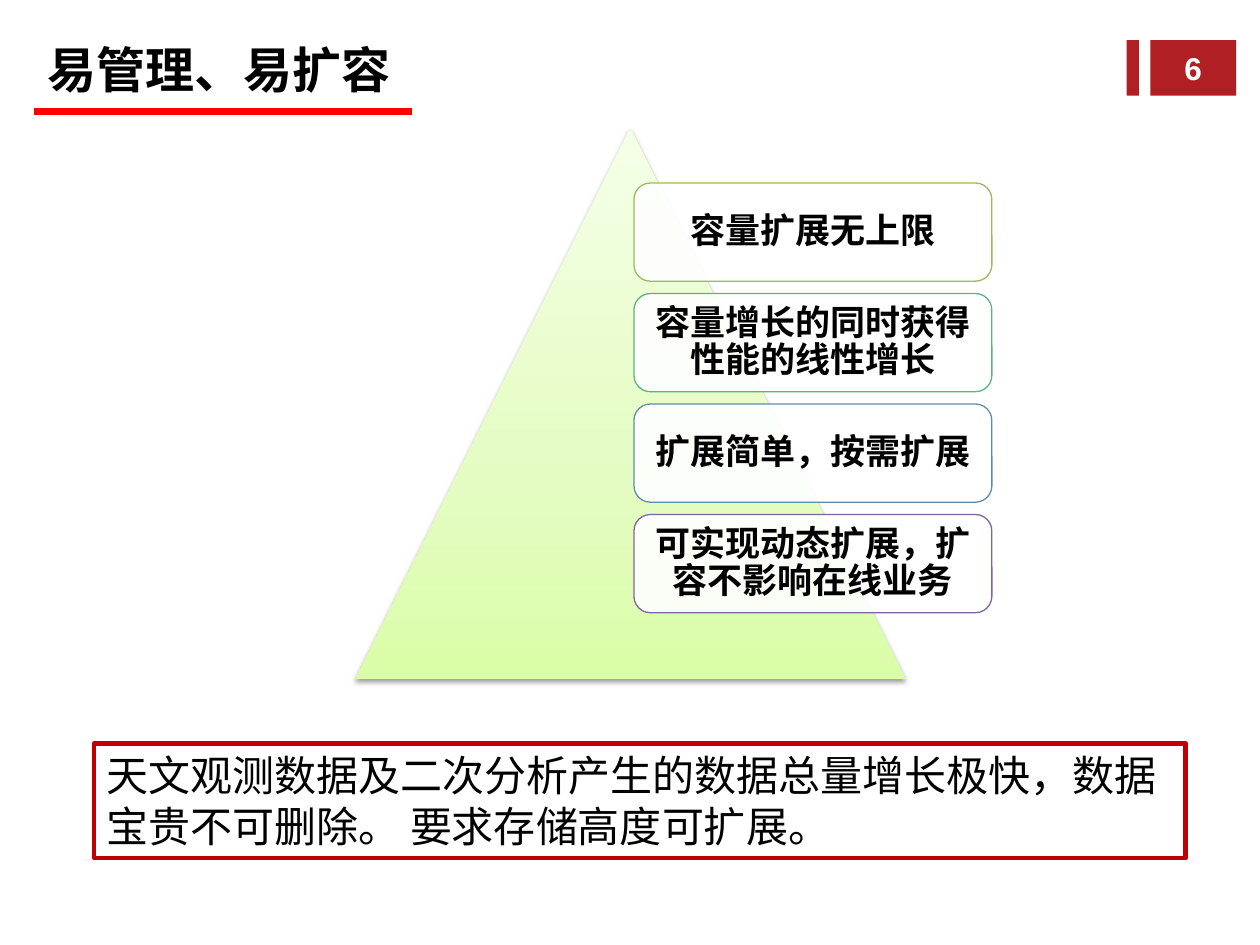
from lxml import etree
from pptx import Presentation
from pptx.dml.color import RGBColor
from pptx.enum import shapes, text
from pptx.oxml import ns
from pptx.util import Cm, Pt

HUES = {"black": "000000", "white": "FFFFFF", "badge": "B01F24", "rule": "FF0000",
        "frame": "C00000", "low": "DAFDA7", "mid": "E4FCC2", "high": "F5FFE7",
        "green": "9BBB59", "mint": "5CB37C", "blue": "608CAB", "plum": "8064A2"}
HAN = "Noto Sans CJK SC"
KIND = shapes.MSO_SHAPE
ALIGN = text.PP_ALIGN
ANCHOR = text.MSO_ANCHOR
CARDS = [("容量扩展无上限", "green"), ("容量增长的同时获得性能的线性增长", "mint"),
         ("扩展简单，按需扩展", "blue"), ("可实现动态扩展，扩容不影响在线业务", "plum")]
NOTE = "天文观测数据及二次分析产生的数据总量增长极快，数据宝贵不可删除。 要求存储高度可扩展。"


def rgb(name):
    return RGBColor.from_string(HUES[name])


def sub(node, tag, **vals):
    return etree.SubElement(node, ns.qn("a:" + tag), {k: str(v) for k, v in vals.items()})


def assign(item, vals):
    for key, val in vals.items():
        setattr(item, key, val)


def write(shape, words, font, para, frame, hue="black"):
    """Fill a shape with one formatted paragraph."""
    body = shape.text_frame
    assign(body, {"word_wrap": True, **frame})
    line = body.paragraphs[0]
    assign(line, para)
    run = line.add_run()
    run.text = words
    assign(run.font, font)
    run.font.color.rgb = rgb(hue)
    sub(run.font._element, "ea", typeface=HAN)


def block(slide, kind, box, fill=None, line=None, width=1):
    """Add a flat shape; box holds left, top, width, height in cm."""
    shape = slide.shapes.add_shape(kind, *map(Cm, box))
    shape.shadow.inherit = False
    if fill:
        shape.fill.solid()
        shape.fill.fore_color.rgb = rgb(fill)
    else:
        shape.fill.background()
    if line:
        shape.line.color.rgb = rgb(line)
        shape.line.width = Pt(width)
    else:
        shape.line.fill.background()
    return shape


def head(slide, box):
    """Title with the red rule below it."""
    x, y, w, h = box
    title = slide.shapes.title
    assign(title, dict(zip(("left", "top", "width", "height"), map(Cm, box))))
    write(title, "易管理、易扩容", {"size": Pt(28), "bold": True, "name": HAN},
          {"alignment": ALIGN.LEFT},
          {"vertical_anchor": ANCHOR.MIDDLE, "auto_size": text.MSO_AUTO_SIZE.NONE})
    base = Cm(y + h + 0.06)
    rule = slide.shapes.add_connector(shapes.MSO_CONNECTOR.STRAIGHT,
                                      Cm(x - 0.02), base, Cm(x + 7.6), base)
    rule.line.color.rgb = rgb("rule")
    rule.line.width = Pt(4)
    sub(rule._element.spPr, "effectLst")


def badge(slide, box):
    """Narrow bar and page number block."""
    x, y, w, h = box
    block(slide, KIND.RECTANGLE, (x, y, 0.25, h), "badge")
    page = block(slide, KIND.RECTANGLE, (x + 0.48, y, w - 0.48, h), "badge")
    write(page, "6", {"size": Pt(18), "bold": True, "name": "Arial"},
          {"alignment": ALIGN.CENTER}, {"vertical_anchor": ANCHOR.MIDDLE}, "white")


def peak(slide, box):
    """Triangle with a rising gradient and a soft shadow."""
    shape = block(slide, KIND.ISOSCELES_TRIANGLE, box)
    fill = shape.fill
    fill.gradient()
    fill.gradient_angle = 90
    stops = shape._element.spPr.find(".//" + ns.qn("a:gsLst"))
    for old in list(stops):
        stops.remove(old)
    for pos, name in ((0, "low"), (35, "mid"), (100, "high")):
        sub(sub(stops, "gs", pos=pos * 1000), "srgbClr", val=HUES[name])
    glow = sub(shape._element.spPr.find(ns.qn("a:effectLst")), "outerShdw",
               blurRad=Pt(3.1), dist=Pt(1.6), dir=5400000, rotWithShape=0)
    sub(sub(glow, "srgbClr", val=HUES["black"]), "alpha", val=38000)


def pyramid(slide, box):
    """Triangle with a column of cards over its right half."""
    x, y, w, h = box
    peak(slide, box)
    wide, tall = w * 0.65, 1.98
    step = tall * 9 / 8
    pads = dict.fromkeys(("margin_left", "margin_top", "margin_right", "margin_bottom"), Cm(0.2))
    for i, (words, hue) in enumerate(CARDS):
        place = (x + w / 2 + 0.07, y + 1.1 + i * step, wide, tall)
        card = block(slide, KIND.ROUNDED_RECTANGLE, place, "white", hue, 0.75)
        tint = card._element.spPr.find(ns.qn("a:solidFill"))[0]
        sub(tint, "alpha", val=90000)
        write(card, words, {"size": Pt(20), "bold": True, "name": "Calibri"},
              {"alignment": ALIGN.CENTER, "line_spacing": 0.9, "space_after": Pt(7)},
              {"vertical_anchor": ANCHOR.MIDDLE, **pads})


def note(slide, box):
    """Framed remark at the foot."""
    shape = block(slide, KIND.RECTANGLE, box, line="frame", width=2.5)
    write(shape, NOTE, {"size": Pt(24), "name": "Calibri"}, {"alignment": ALIGN.LEFT},
          {"vertical_anchor": ANCHOR.TOP, "auto_size": text.MSO_AUTO_SIZE.SHAPE_TO_FIT_TEXT})


def main():
    deck = Presentation()
    assign(deck, {"slide_width": Cm(25.4), "slide_height": Cm(19.05)})
    slide = deck.slides.add_slide(deck.slide_layouts[5])
    badge(slide, (22.71, 0.81, 2.21, 1.12))
    head(slide, (0.71, 0.61, 15.19, 1.57))
    pyramid(slide, (7.16, 2.59, 11.1, 11.1))
    note(slide, (1.9, 14.99, 22, 2.31))
    deck.save("out.pptx")


if __name__ == "__main__":
    main()
